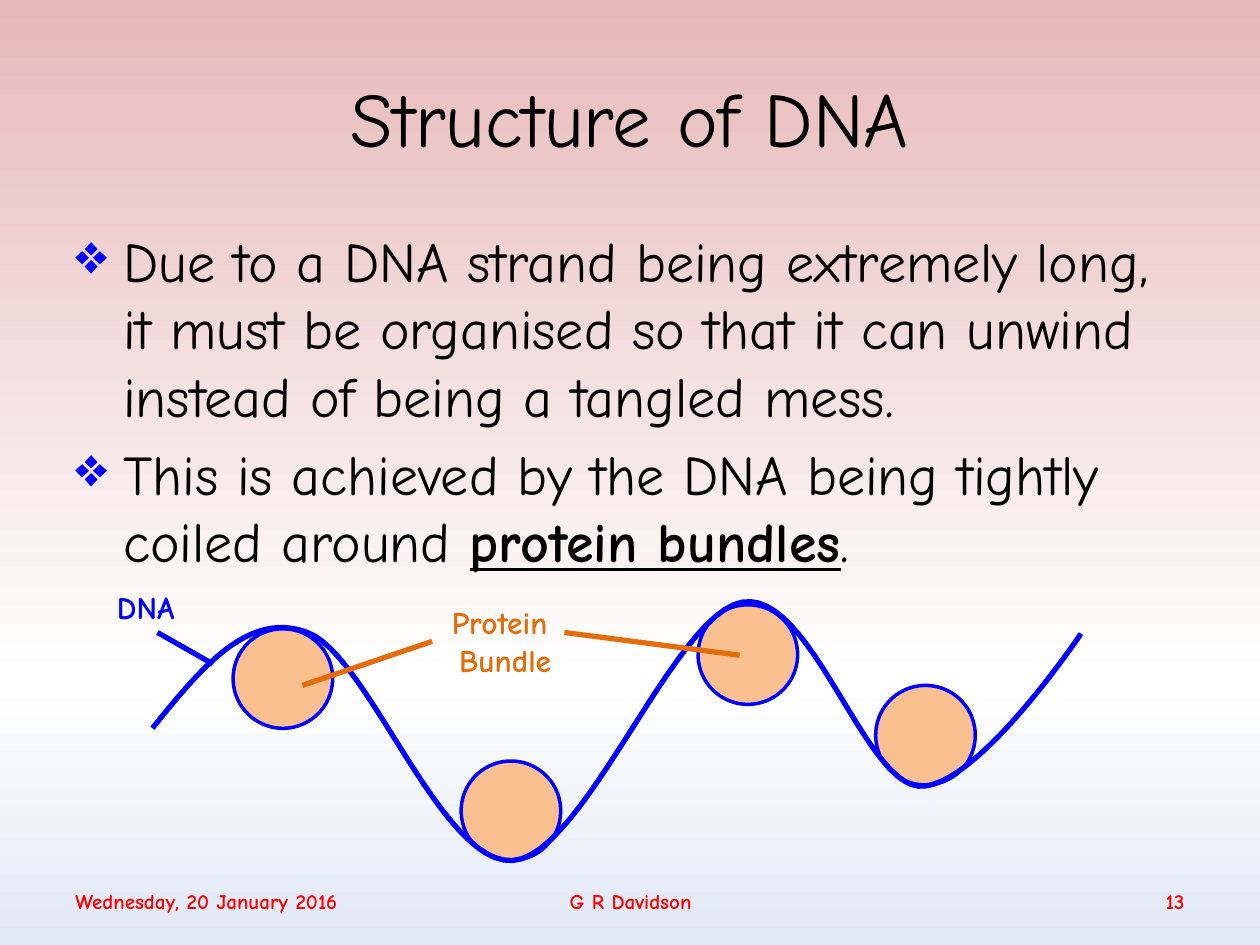
from copy import deepcopy

from lxml import etree
from pptx import Presentation
from pptx.dml.color import RGBColor
from pptx.enum.shapes import MSO_CONNECTOR, MSO_SHAPE
from pptx.enum.text import MSO_ANCHOR, PP_ALIGN
from pptx.oxml.ns import qn
from pptx.util import Inches, Pt

LEFT, CENTER, RIGHT = PP_ALIGN.LEFT, PP_ALIGN.CENTER, PP_ALIGN.RIGHT
TOP, MIDDLE = MSO_ANCHOR.TOP, MSO_ANCHOR.MIDDLE
OVAL, STRAIGHT = MSO_SHAPE.OVAL, MSO_CONNECTOR.STRAIGHT

FONT = "Comic Neue"
BLACK, BLUE, ORANGE, PEACH, RED = "000000", "0000FF", "E46C0A", "FAC090", "FF0000"
WIDTH, HEIGHT, MARGIN = 10, 7.5, 0.5
CONTENT_WIDTH = WIDTH - 2 * MARGIN

# Content: a paragraph is a list of (text, emphasised) spans
BACKGROUND = [(0, "E6B9B8"), (0.72, "FFFFFF"), (1, "E1E8F5")]
TITLE = "Structure of DNA"
BULLETS = [
    [("Due to a DNA strand being extremely long, it must be organised so that "
      "it can unwind instead of being a tangled mess.", False)],
    [("This is achieved by the DNA being tightly coiled around ", False),
     ("protein bundles", True), (".", False)],
]
# Footer: text, left, width, alignment
FOOTER = [
    ("Wednesday, 20 January 2016", MARGIN, 3.32, LEFT),
    ("G R Davidson", 3.42, 3.17, CENTER),
    ("13", 7.17, 2.33, RIGHT),
]
FOOTER_TOP, FOOTER_HEIGHT = 6.95, 0.4

# Drawing: bundle corners, strand as cubic curves, labels and pointers
BUNDLE_SIZE = 0.79
BUNDLES = [(1.85, 4.99), (3.66, 6.04), (5.54, 4.8), (6.95, 5.44)]
STRAND_START = (1.21, 5.78)
STRAND_CURVES = [
    ((1.59, 5.31), (1.97, 4.84), (2.44, 5.02)),
    ((2.92, 5.19), (3.5, 6.87), (4.07, 6.83)),
    ((4.64, 6.79), (5.35, 4.87), (5.89, 4.78)),
    ((6.43, 4.68), (6.85, 6.2), (7.29, 6.24)),
    ((7.74, 6.28), (8.58, 5.03), (8.58, 5.03)),
]
CURVE_STEPS = 24
LABELS = [
    (["DNA"], (0.83, 4.62, 0.77, 0.4), BLUE, LEFT),
    (["Protein ", "Bundle"], (3.43, 4.74, 1.16, 0.71), ORANGE, CENTER),
]
POINTERS = [
    ((1.25, 5.02), (1.69, 5.27), BLUE),
    ((2.4, 5.44), (3.43, 5.09), ORANGE),
    ((4.48, 5.02), (5.87, 5.2), ORANGE),
]


def color(value):
    return RGBColor.from_string(value)


def set_line(shape, value, width):
    shape.line.color.rgb = color(value)
    shape.line.width = Pt(width)


def style(span, size, value, bold=False):
    span.font.name, span.font.size, span.font.bold = FONT, Pt(size), bold
    span.font.color.rgb = color(value)


def add_text(slide, place, paragraphs, size, value, align=LEFT, anchor=TOP, bold=False):
    box = slide.shapes.add_textbox(*map(Inches, place))
    frame = box.text_frame
    frame.word_wrap, frame.vertical_anchor = True, anchor
    frame.text = "\n".join(paragraphs)
    for para in frame.paragraphs:
        para.alignment = align
        for span in para.runs:
            style(span, size, value, bold)


def add_bullets(slide, place, paragraphs, size):
    box = slide.shapes.add_textbox(*map(Inches, place))
    frame = box.text_frame
    frame.word_wrap = True
    for index, spans in enumerate(paragraphs):
        para = frame.add_paragraph() if index else frame.paragraphs[0]
        para.space_before = Pt(size * 0.2)
        for text, emphasised in spans:
            span = para.add_run()
            span.text = text
            style(span, size, BLACK, emphasised)
            span.font.underline = emphasised
        # Hanging diamond bullet
        properties = para._p.get_or_add_pPr()
        properties.set("marL", str(Inches(0.38)))
        properties.set("indent", str(-Inches(0.38)))
        bullet_color = etree.SubElement(properties, qn("a:buClr"))
        etree.SubElement(bullet_color, qn("a:srgbClr"), val=BLUE)
        etree.SubElement(properties, qn("a:buChar"), char="❖")


def paint_background(slide):
    fill = slide.background.fill
    fill.gradient()
    fill.gradient_angle = 270
    stop_list = slide._element.find(".//" + qn("a:gsLst"))
    stop_list.append(deepcopy(stop_list[-1]))
    for stop, (position, value) in zip(fill.gradient_stops, BACKGROUND):
        stop.position = position
        stop.color.rgb = color(value)


def curve_points(start, curves):
    for first, second, end in curves:
        for step in range(1, CURVE_STEPS + 1):
            t = step / CURVE_STEPS
            u = 1 - t
            yield tuple(
                Inches(u**3 * a + 3 * u * u * t * b + 3 * u * t * t * c + t**3 * d)
                for a, b, c, d in zip(start, first, second, end))
        start = end


def draw_dna(slide):
    shapes = slide.shapes
    # Protein bundles
    for left, top in BUNDLES:
        bundle = shapes.add_shape(
            OVAL, *map(Inches, (left, top, BUNDLE_SIZE, BUNDLE_SIZE)))
        bundle.shadow.inherit = False
        bundle.fill.solid()
        bundle.fill.fore_color.rgb = color(PEACH)
        set_line(bundle, BLUE, 2)
    # Strand
    builder = shapes.build_freeform(*map(Inches, STRAND_START))
    builder.add_line_segments(curve_points(STRAND_START, STRAND_CURVES), close=False)
    strand = builder.convert_to_shape()
    strand.shadow.inherit = False
    strand.fill.background()
    set_line(strand, BLUE, 3)
    # Labels and their pointers
    for lines, place, value, align in LABELS:
        add_text(slide, place, lines, 18, value, align, bold=True)
    for start, end, value in POINTERS:
        pointer = shapes.add_connector(STRAIGHT, *map(Inches, start + end))
        set_line(pointer, value, 3)
        etree.SubElement(pointer._element.spPr, qn("a:effectLst"))


def main():
    deck = Presentation()
    deck.slide_width, deck.slide_height = Inches(WIDTH), Inches(HEIGHT)
    page = deck.slides.add_slide(deck.slide_layouts[6])
    paint_background(page)
    add_text(page, (MARGIN, 0.3, CONTENT_WIDTH, 1.25), [TITLE], 44, BLACK, CENTER, MIDDLE)
    add_bullets(page, (MARGIN, 1.75, CONTENT_WIDTH, 2.73), BULLETS, 32)
    draw_dna(page)
    for text, left, width, align in FOOTER:
        place = (left, FOOTER_TOP, width, FOOTER_HEIGHT)
        add_text(page, place, [text], 12, RED, align, MIDDLE, bold=True)
    deck.save("out.pptx")


if __name__ == "__main__":
    main()
